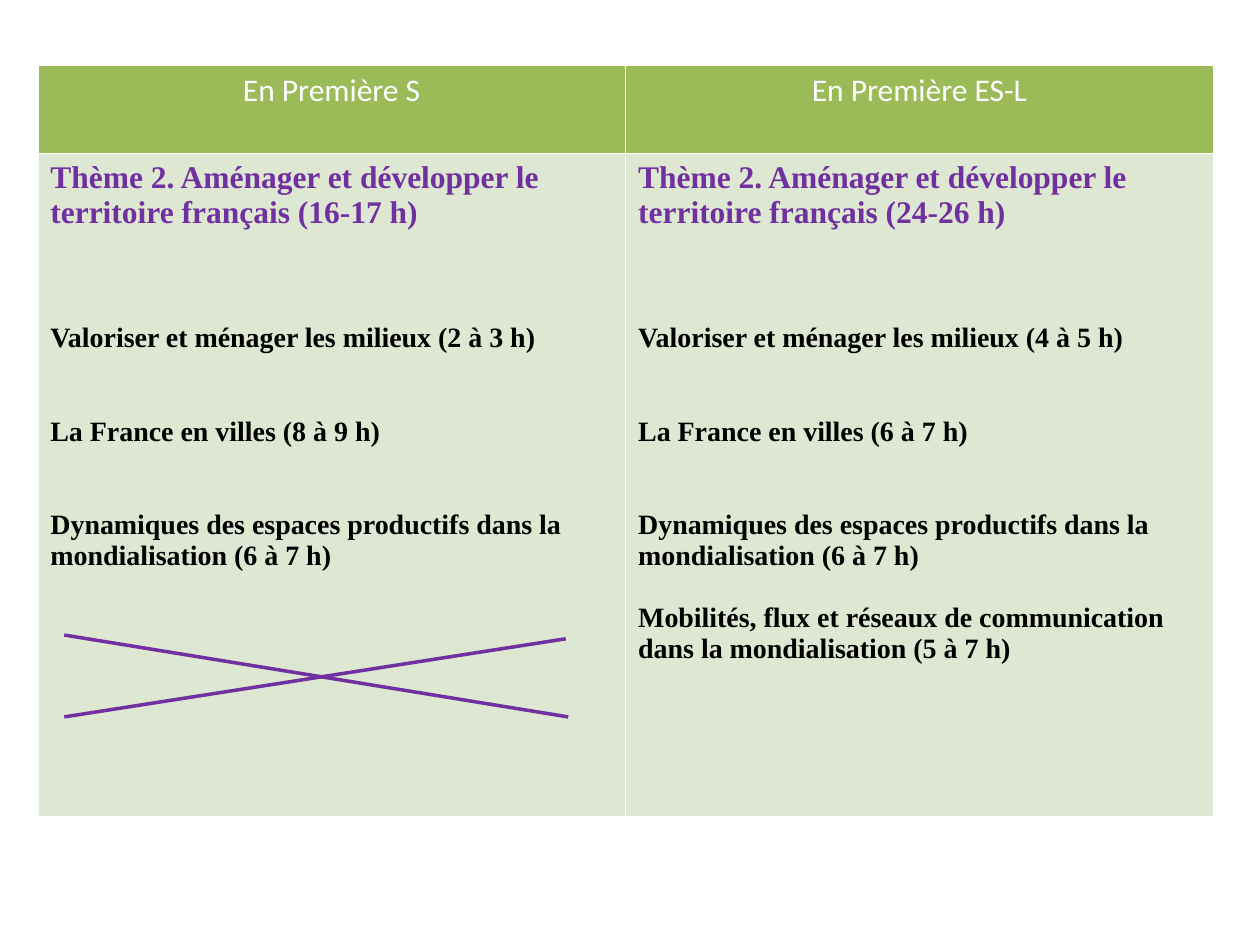
import pptx
import pptx.util
import pptx.dml.color
import pptx.enum.shapes
import pptx.enum.text
import pptx.oxml.ns
import lxml.etree

Inches = pptx.util.Inches
Pt = pptx.util.Pt
qn = pptx.oxml.ns.qn

hues = {
    "green": "9BBB59",
    "pale": "DEE7D1",
    "purple": "7030A0",
    "black": "000000",
    "white": "FFFFFF",
}


def color(name):
    return pptx.dml.color.RGBColor.from_string(hues[name])


def paint(cell, name):
    props = cell._tc.get_or_add_tcPr()
    for side in ("lnL", "lnR", "lnT", "lnB"):
        edge = lxml.etree.SubElement(props, qn("a:" + side), w=str(Pt(1)))
        fill = lxml.etree.SubElement(edge, qn("a:solidFill"))
        lxml.etree.SubElement(fill, qn("a:srgbClr"), val=hues["white"])
    cell.fill.solid()
    cell.fill.fore_color.rgb = color(name)


deck = pptx.Presentation()
deck.slide_width = Inches(10)
deck.slide_height = Inches(7.5)
slide = deck.slides.add_slide(deck.slide_layouts[6])

theme = "Thème 2. Aménager et développer le territoire français"
parts = [
    ("Valoriser et ménager les milieux", 3),
    ("La France en villes", 2),
    ("Dynamiques des espaces productifs dans la mondialisation", 2),
    ("Mobilités, flux et réseaux de communication dans la mondialisation", 1),
]
tracks = [
    ("En Première S", "16-17 h", ["2 à 3 h", "8 à 9 h", "6 à 7 h"]),
    ("En Première ES-L", "24-26 h", ["4 à 5 h", "6 à 7 h", "6 à 7 h", "5 à 7 h"]),
]
row_gap = 17.75

frame = slide.shapes.add_table(
    2, 2, Inches(0.3), Inches(0.52), Inches(9.33), Inches(5.96))
table = frame.table
table.rows[0].height = Inches(0.7)
table.rows[1].height = Inches(5.26)

for col, (label, total, hours) in enumerate(tracks):
    head = table.cell(0, col)
    paint(head, "green")
    head.text = label
    para = head.text_frame.paragraphs[0]
    para.alignment = pptx.enum.text.PP_ALIGN.CENTER
    para.font.name = "Calibri"
    para.font.size = Pt(18)
    para.font.bold = False
    para.font.color.rgb = color("white")

    body = table.cell(1, col)
    paint(body, "pale")
    lines = [(f"{theme} ({total})", 0, 18, "purple")]
    for (topic, gap), time in zip(parts, hours):
        lines.append((f"{topic} ({time})", gap, 16, "black"))
    body.text = "\n".join(line[0] for line in lines)
    for para, (text, gap, size, hue) in zip(body.text_frame.paragraphs, lines):
        para.space_before = Pt(gap * row_gap)
        para.font.name = "Times New Roman"
        para.font.size = Pt(size)
        para.font.bold = True
        para.font.color.rgb = color(hue)

for ends in [(0.51, 5.04, 4.51, 5.69), (4.49, 5.07, 0.51, 5.69)]:
    stroke = slide.shapes.add_connector(
        pptx.enum.shapes.MSO_CONNECTOR.STRAIGHT, *map(Inches, ends))
    stroke.line.color.rgb = color("purple")
    stroke.line.width = Pt(2)
    lxml.etree.SubElement(stroke._element.spPr, qn("a:effectLst"))

deck.save("out.pptx")
